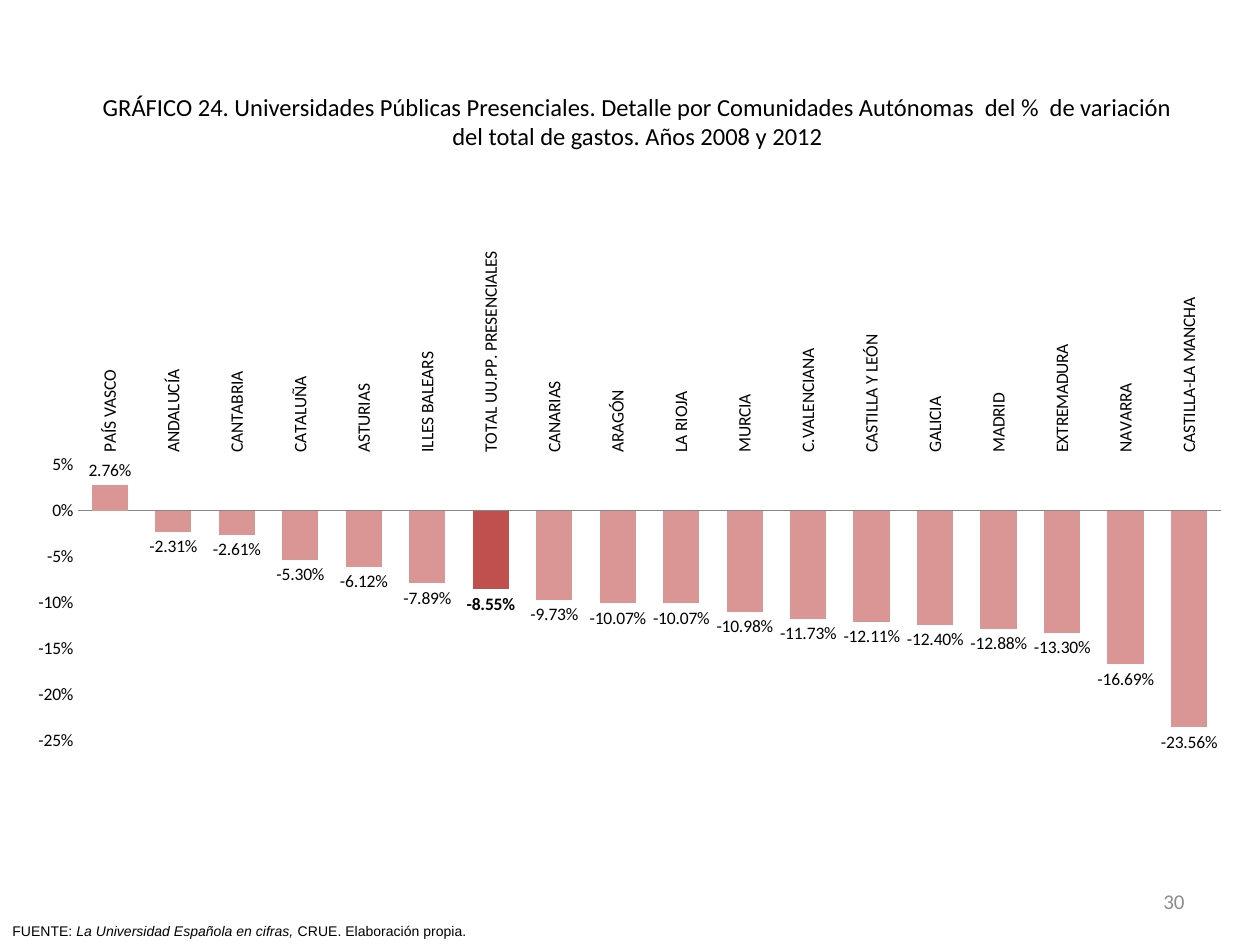
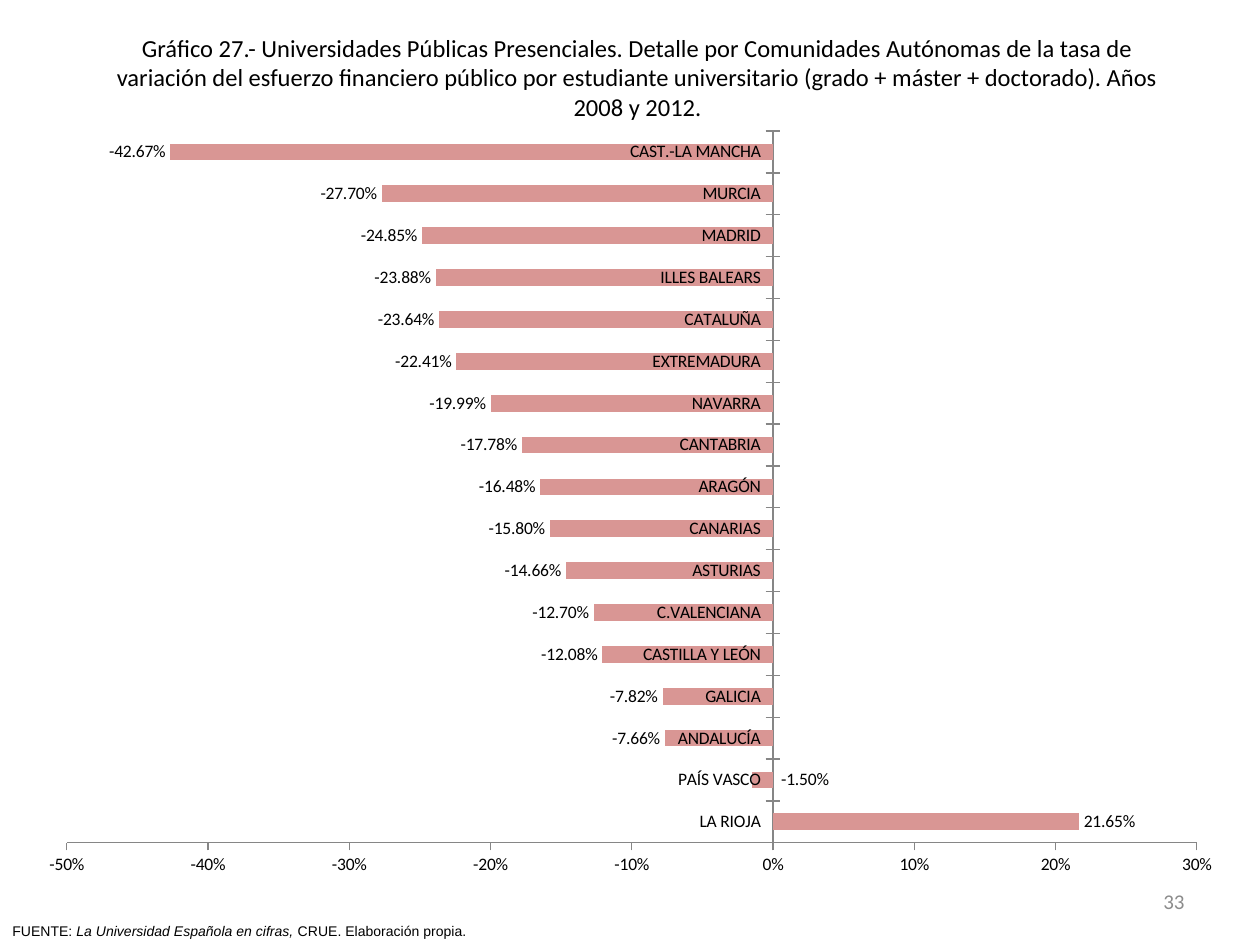
import pptx
import pptx.chart.data
import pptx.dml.color
import pptx.enum.chart
import pptx.enum.text
import pptx.oxml
import pptx.oxml.ns
import pptx.util
from pptx.util import Inches

BLACK, GREY, AXIS_GREY = "000000", "8C8C8C", "868686"
BAR_PINK, TOTAL_RED = "D99694", "C0504D"
HEADING_FONT, SOURCE_FONT = "Calibri", "Arial"
TITLE_ONLY = 5
CHART_WIDTH = 9.61

ChartType = pptx.enum.chart.XL_CHART_TYPE
TickMark = pptx.enum.chart.XL_TICK_MARK
Align = pptx.enum.text.PP_ALIGN
Anchor = pptx.enum.text.MSO_ANCHOR

SPENDING_CHANGE = [
    ("PAÍS VASCO", 0.0276), ("ANDALUCÍA", -0.0231), ("CANTABRIA", -0.0261),
    ("CATALUÑA", -0.053), ("ASTURIAS", -0.0612), ("ILLES BALEARS", -0.0789),
    ("TOTAL UU.PP. PRESENCIALES", -0.0855), ("CANARIAS", -0.0973),
    ("ARAGÓN", -0.1007), ("LA RIOJA", -0.1007), ("MURCIA", -0.1098),
    ("C.VALENCIANA", -0.1173), ("CASTILLA Y LEÓN", -0.1211),
    ("GALICIA", -0.124), ("MADRID", -0.1288), ("EXTREMADURA", -0.133),
    ("NAVARRA", -0.1669), ("CASTILLA-LA MANCHA", -0.2356),
]
EFFORT_CHANGE = [
    ("LA RIOJA", 0.2165), ("PAÍS VASCO", -0.015), ("ANDALUCÍA", -0.0766),
    ("GALICIA", -0.0782), ("CASTILLA Y LEÓN", -0.1208),
    ("C.VALENCIANA", -0.127), ("ASTURIAS", -0.1466), ("CANARIAS", -0.158),
    ("ARAGÓN", -0.1648), ("CANTABRIA", -0.1778), ("NAVARRA", -0.1999),
    ("EXTREMADURA", -0.2241), ("CATALUÑA", -0.2364),
    ("ILLES BALEARS", -0.2388), ("MADRID", -0.2485), ("MURCIA", -0.277),
    ("CAST.-LA MANCHA", -0.4267),
]


def color(hex_value):
    return pptx.dml.color.RGBColor.from_string(hex_value)


def set_font(font, name, size, hex_value=BLACK):
    font.name = name
    font.size = pptx.util.Pt(size)
    font.color.rgb = color(hex_value)


def add_run(paragraph, text, name, size, hex_value=BLACK, italic=False):
    run = paragraph.add_run()
    run.text = text
    set_font(run.font, name, size, hex_value)
    run.font.italic = italic


def set_frame(shape, align, anchor):
    """Prepare the text frame and return its first paragraph."""
    frame = shape.text_frame
    frame.word_wrap = True
    frame.auto_size = pptx.enum.text.MSO_AUTO_SIZE.NONE
    frame.vertical_anchor = anchor
    frame.paragraphs[0].alignment = align
    return frame.paragraphs[0]


def place_title(slide, text, top, height):
    title = slide.shapes.title
    title.left, title.top = Inches(0.65), Inches(top)
    title.width, title.height = Inches(8.82), Inches(height)
    add_run(set_frame(title, Align.CENTER, Anchor.TOP), text, HEADING_FONT, 14)


def add_footer(slide, number):
    """Source line at the lower left and page number at the lower right."""
    source = slide.shapes.add_textbox(
        Inches(0), Inches(7.27), Inches(7.8), Inches(0.23))
    paragraph = set_frame(source, Align.LEFT, Anchor.TOP)
    add_run(paragraph, "FUENTE: ", SOURCE_FONT, 8)
    add_run(paragraph, "La Universidad Española en cifras,", SOURCE_FONT, 8, italic=True)
    add_run(paragraph, " CRUE. Elaboración propia.", SOURCE_FONT, 8)

    page = slide.shapes.add_textbox(
        Inches(7.17), Inches(6.95), Inches(2.33), Inches(0.4))
    paragraph = set_frame(page, Align.RIGHT, Anchor.MIDDLE)
    add_run(paragraph, str(number), HEADING_FONT, 12, GREY)


def add_title_slide(presentation, title, title_top, title_height, number):
    slide = presentation.slides.add_slide(presentation.slide_layouts[TITLE_ONLY])
    place_title(slide, title, title_top, title_height)
    add_footer(slide, number)
    return slide


def set_layout(parent, position, settings):
    """Insert a manual chart layout as the child at the given position."""
    for old in parent.findall(pptx.oxml.ns.qn("c:layout")):
        parent.remove(old)
    values = "".join(f'<c:{tag} val="{value}"/>' for tag, value in settings.items())
    parent.insert(position, pptx.oxml.parse_xml(
        f'<c:layout {pptx.oxml.ns.nsdecls("c")}>'
        f"<c:manualLayout>{values}</c:manualLayout></c:layout>"))


def set_plot_area(chart, chart_height, left, top, width, height):
    """Place the inner plot area, in inches from the chart's corner."""
    set_layout(chart.element.chart.plotArea, 0, {
        "layoutTarget": "inner", "xMode": "edge", "yMode": "edge",
        "x": left / CHART_WIDTH, "y": top / chart_height,
        "w": width / CHART_WIDTH, "h": height / chart_height})


def hide_leader_lines(labels):
    """Turn off the lines between moved labels and their bars."""
    element = labels._element
    for setting in element.findall(pptx.oxml.ns.qn("c:showLeaderLines")):
        setting.set("val", "0")
    element.append(pptx.oxml.parse_xml(
        f'<c:extLst {pptx.oxml.ns.nsdecls("c")}>'
        '<c:ext uri="{CE6537A1-D6FC-4f65-9D91-7224C49458BB}" '
        'xmlns:c15="http://schemas.microsoft.com/office/drawing/2012/chart">'
        '<c15:showLeaderLines val="0"/></c:ext></c:extLst>'))


def add_change_chart(slide, chart_type, data, top, height, gap, scale):
    """Bar or column chart of percentage changes with labelled bars."""
    chart_data = pptx.chart.data.CategoryChartData(number_format="0.00%")
    chart_data.categories = [region for region, _ in data]
    chart_data.add_series("Series 1", [change for _, change in data])
    chart = slide.shapes.add_chart(
        chart_type, Inches(0.2), Inches(top), Inches(CHART_WIDTH), Inches(height),
        chart_data).chart
    chart.has_legend = chart.has_title = False
    set_font(chart.font, HEADING_FONT, 10)

    plot = chart.plots[0]
    plot.gap_width = gap
    plot.vary_by_categories = False
    series = plot.series[0]
    series.invert_if_negative = False
    series.format.fill.solid()
    series.format.fill.fore_color.rgb = color(BAR_PINK)
    labels = series.data_labels
    labels.show_value = True
    labels.number_format = "0.00%"
    labels.number_format_is_linked = False
    labels.position = pptx.enum.chart.XL_LABEL_POSITION.OUTSIDE_END
    set_font(labels.font, HEADING_FONT, 10)
    hide_leader_lines(labels)

    value_axis = chart.value_axis
    value_axis.minimum_scale, value_axis.maximum_scale, value_axis.major_unit = scale
    value_axis.tick_labels.number_format = "0%"
    value_axis.tick_labels.number_format_is_linked = False
    for axis in (chart.category_axis, value_axis):
        axis.has_major_gridlines = False
        axis.format.line.color.rgb = color(AXIS_GREY)
        axis.format.line.width = pptx.util.Pt(0.75)
        set_font(axis.tick_labels.font, HEADING_FONT, 10)
    return chart


def style_point_label(point, bold=False):
    label = point.data_label
    set_font(label.font, HEADING_FONT, 10)
    label.font.bold = bold
    label.position = pptx.enum.chart.XL_LABEL_POSITION.OUTSIDE_END


def build_spending_slide(presentation):
    slide = add_title_slide(
        presentation,
        "GRÁFICO 24. Universidades Públicas Presenciales. Detalle por Comunidades "
        "Autónomas  del %  de variación del total de gastos. Años 2008 y 2012",
        0.68, 0.57, 30)
    height = 6.05
    chart = add_change_chart(slide, ChartType.COLUMN_CLUSTERED, SPENDING_CHANGE,
                             0.78, height, 75, (-0.25, 0.05, 0.05))
    set_plot_area(chart, height, 0.42, 2.91, 9.07, 2.19)
    chart.plots[0].overlap = -25

    # Upright region names above the columns
    regions = chart.category_axis
    regions.major_tick_mark = TickMark.NONE
    regions.tick_label_position = pptx.enum.chart.XL_TICK_LABEL_POSITION.HIGH
    body = regions._element.find(".//" + pptx.oxml.ns.qn("a:bodyPr"))
    body.set("rot", "-5400000")
    body.set("vert", "horz")
    chart.value_axis.major_tick_mark = TickMark.NONE
    chart.value_axis.format.line.fill.background()

    # Highlighted national total
    names = [region for region, _ in SPENDING_CHANGE]
    total = chart.plots[0].series[0].points[names.index("TOTAL UU.PP. PRESENCIALES")]
    total.format.fill.solid()
    total.format.fill.fore_color.rgb = color(TOTAL_RED)
    style_point_label(total, bold=True)


def build_effort_slide(presentation):
    slide = add_title_slide(
        presentation,
        "Gráfico 27.- Universidades Públicas Presenciales. Detalle por Comunidades "
        "Autónomas de la tasa de variación del esfuerzo financiero público por "
        "estudiante universitario (grado + máster + doctorado). Años 2008 y 2012.",
        0.21, 0.81, 33)
    height = 6.15
    chart = add_change_chart(slide, ChartType.BAR_CLUSTERED, EFFORT_CHANGE,
                             0.92, height, 150, (-0.5, 0.3, 0.1))
    set_plot_area(chart, height, 0.33, 0.12, 8.97, 5.65)
    chart.category_axis.major_tick_mark = TickMark.CROSS
    chart.value_axis.major_tick_mark = TickMark.OUTSIDE

    # The short bar's label moves to the right of the axis
    names = [region for region, _ in EFFORT_CHANGE]
    series = chart.plots[0].series[0]
    style_point_label(series.points[names.index("PAÍS VASCO")])
    label = series._element.find(".//" + pptx.oxml.ns.qn("c:dLbl"))
    set_layout(label, 1, {"x": 0.65 / CHART_WIDTH, "y": 0})


def main():
    presentation = pptx.Presentation()
    presentation.slide_width = Inches(10)
    presentation.slide_height = Inches(7.5)
    build_spending_slide(presentation)
    build_effort_slide(presentation)
    presentation.save("out.pptx")


if __name__ == "__main__":
    main()
